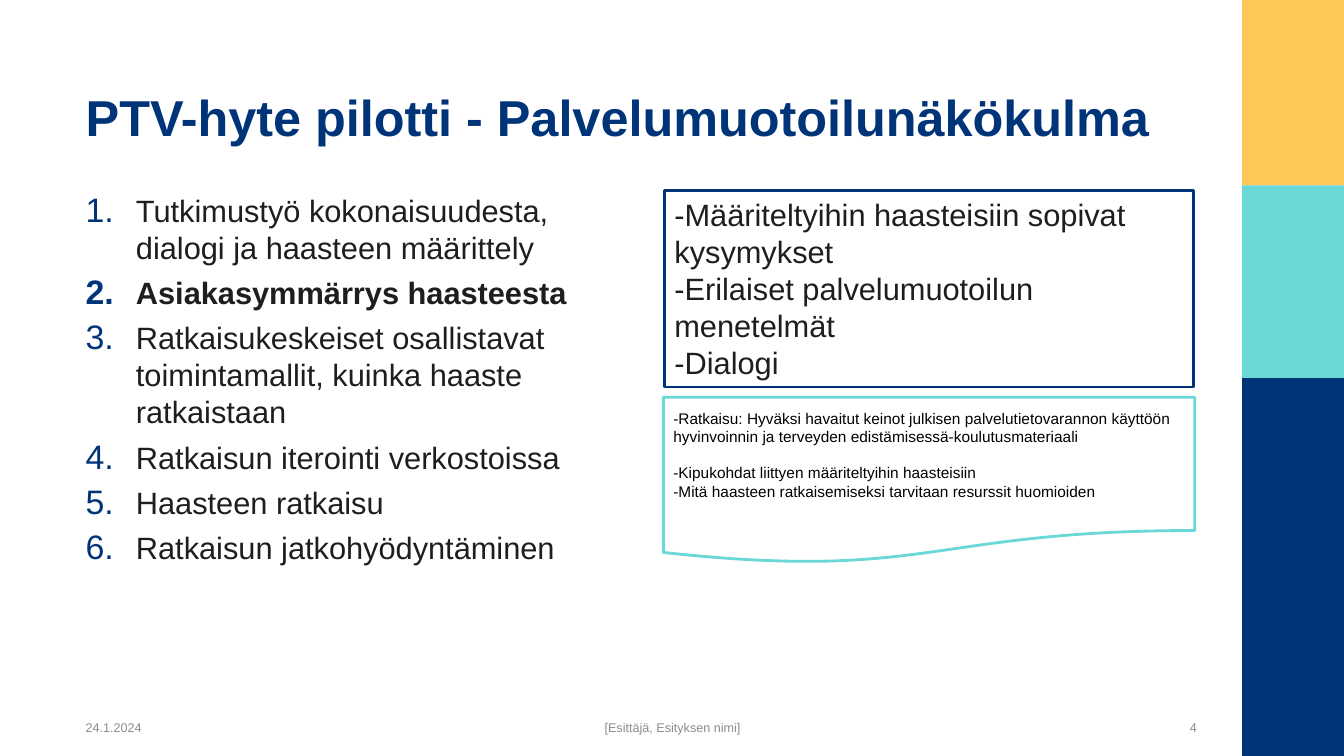
from lxml import etree
from pptx import Presentation
from pptx.dml.color import RGBColor
from pptx.enum.shapes import MSO_SHAPE
from pptx.enum.text import MSO_ANCHOR, MSO_AUTO_SIZE, PP_ALIGN
from pptx.oxml.ns import qn
from pptx.util import Inches, Pt

RECTANGLE = MSO_SHAPE.RECTANGLE
DOCUMENT = MSO_SHAPE.FLOWCHART_DOCUMENT
TOP, MIDDLE, BOTTOM = MSO_ANCHOR.TOP, MSO_ANCHOR.MIDDLE, MSO_ANCHOR.BOTTOM
LEFT, CENTER, RIGHT = PP_ALIGN.LEFT, PP_ALIGN.CENTER, PP_ALIGN.RIGHT
NO_AUTOFIT = MSO_AUTO_SIZE.NONE

FONT = "Arial"
COLORS = {
    "navy": "003479",
    "yellow": "FFC658",
    "turquoise": "69D8D7",
    "white": "FFFFFF",
    "text": "1E1E1E",
    "black": "000000",
    "footer": "8C8C8C",
}

TITLE = "PTV-hyte pilotti - Palvelumuotoilunäkökulma"
STEPS = [
    "Tutkimustyö kokonaisuudesta, dialogi ja haasteen määrittely",
    "Asiakasymmärrys haasteesta",
    "Ratkaisukeskeiset osallistavat toimintamallit, kuinka haaste ratkaistaan",
    "Ratkaisun iterointi verkostoissa",
    "Haasteen ratkaisu",
    "Ratkaisun jatkohyödyntäminen",
]
CURRENT_STEP = 1
METHODS = [
    "-Määriteltyihin haasteisiin sopivat kysymykset",
    "-Erilaiset palvelumuotoilun menetelmät",
    "-Dialogi",
]
OUTCOMES = [
    "-Ratkaisu: Hyväksi havaitut keinot julkisen palvelutietovarannon käyttöön "
    "hyvinvoinnin ja terveyden edistämisessä-koulutusmateriaali",
    "-Kipukohdat liittyen määriteltyihin haasteisiin",
    "-Mitä haasteen ratkaisemiseksi tarvitaan resurssit huomioiden",
]


def rgb(name):
    return RGBColor.from_string(COLORS[name])


def write_lines(text_frame, lines, size, color, align=LEFT, anchor=TOP, bold=False):
    text_frame.word_wrap = True
    text_frame.auto_size = NO_AUTOFIT
    text_frame.vertical_anchor = anchor
    text_frame.text = "\n".join(lines)
    for paragraph in text_frame.paragraphs:
        paragraph.alignment = align
        for run in paragraph.runs:
            run.font.name = FONT
            run.font.size = Pt(size)
            run.font.bold = bold
            run.font.color.rgb = rgb(color)


def add_block(slide, kind, box, fill, line=None):
    shape = slide.shapes.add_shape(kind, *map(Inches, box))
    shape.shadow.inherit = False
    shape.fill.solid()
    shape.fill.fore_color.rgb = rgb(fill)
    if line:
        shape.line.color.rgb = rgb(line)
        shape.line.width = Pt(2)
    else:
        shape.line.fill.background()
    return shape


def add_side_band(slide, box):
    left, top, width, height = box
    bands = [("yellow", 1.84), ("turquoise", 1.91), ("navy", height - 3.75)]
    for color, band_height in bands:
        add_block(slide, RECTANGLE, (left, top, width, band_height), color)
        top += band_height


def add_title(slide, box):
    title = slide.shapes.title
    title.left, title.top, title.width, title.height = map(Inches, box)
    write_lines(title.text_frame, [TITLE], 36, "navy", anchor=BOTTOM, bold=True)


def number_paragraph(paragraph):
    properties = paragraph._p.get_or_add_pPr()
    properties.set("marL", str(Inches(0.5)))
    properties.set("indent", str(-Inches(0.5)))
    bullet_color = etree.SubElement(properties, qn("a:buClr"))
    etree.SubElement(bullet_color, qn("a:srgbClr"), val=COLORS["navy"])
    etree.SubElement(properties, qn("a:buSzPct"), val="110000")
    etree.SubElement(properties, qn("a:buFont"), typeface=FONT)
    etree.SubElement(properties, qn("a:buAutoNum"), type="arabicPeriod")


def add_steps(slide, box):
    text_frame = slide.shapes.add_textbox(*map(Inches, box)).text_frame
    write_lines(text_frame, STEPS, 22, "text")
    for index, paragraph in enumerate(text_frame.paragraphs):
        number_paragraph(paragraph)
        paragraph.space_before = Pt(6 if index else 0)
        paragraph.runs[0].font.bold = index == CURRENT_STEP


def add_methods(slide, box):
    shape = add_block(slide, RECTANGLE, box, "white", "navy")
    write_lines(shape.text_frame, METHODS, 22, "text")


def add_outcomes(slide, box):
    shape = add_block(slide, DOCUMENT, box, "white", "turquoise")
    write_lines(shape.text_frame, OUTCOMES, 11, "black", anchor=MIDDLE)
    shape.text_frame.margin_bottom = Inches(0.23)
    shape.text_frame.paragraphs[1].space_before = Pt(12.65)


def add_footer(slide, box):
    left, top, width, height = box
    parts = [
        ("24.1.2024", 0, 1.65, LEFT),
        ("[Esittäjä, Esityksen nimi]", 2.74, 6.36, CENTER),
        ("4", width - 0.91, 0.91, RIGHT),
    ]
    for text, offset, part_width, align in parts:
        part_box = (left + offset, top, part_width, height)
        text_frame = slide.shapes.add_textbox(*map(Inches, part_box)).text_frame
        write_lines(text_frame, [text], 9, "footer", align, MIDDLE)
        text_frame.paragraphs[0].line_spacing = 0.9


def main():
    presentation = Presentation()
    presentation.slide_width = Inches(13.33)
    presentation.slide_height = Inches(7.5)
    slide = presentation.slides.add_slide(presentation.slide_layouts[5])
    add_side_band(slide, (12.32, 0, 1.01, 7.5))
    add_title(slide, (0.75, 0.16, 11.22, 1.34))
    add_steps(slide, (0.75, 1.85, 5.51, 5.04))
    add_methods(slide, (6.59, 1.89, 5.25, 1.95))
    add_outcomes(slide, (6.58, 3.94, 5.27, 1.65))
    add_footer(slide, (0.75, 7.11, 11.22, 0.24))
    presentation.save("out.pptx")


if __name__ == "__main__":
    main()
